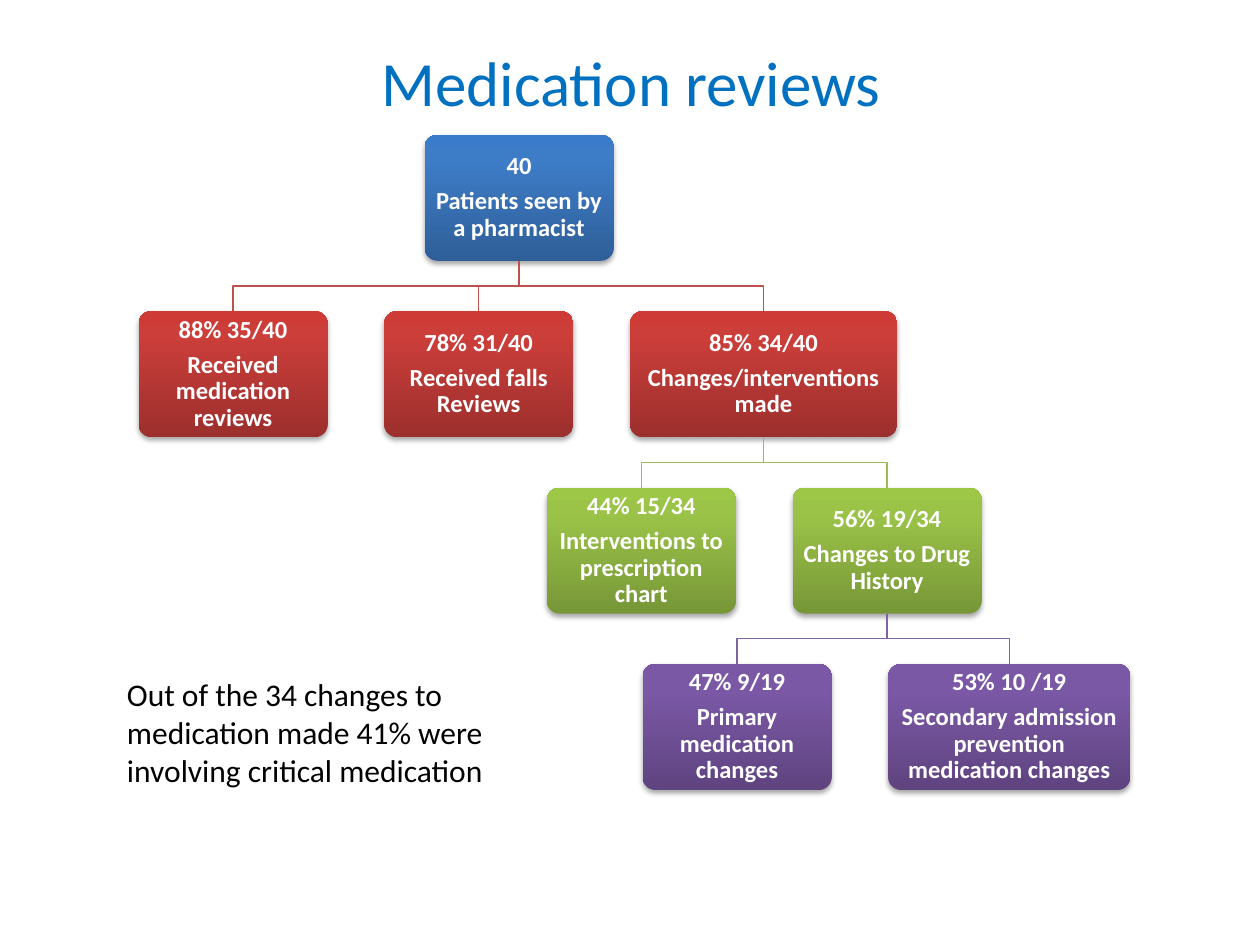
from copy import deepcopy

from lxml.etree import SubElement
from pptx import Presentation
from pptx.dml.color import RGBColor
from pptx.enum.shapes import MSO_SHAPE
from pptx.enum.text import MSO_ANCHOR, PP_ALIGN
from pptx.oxml.ns import qn
from pptx.util import Inches, Pt

COLORS = {
    "title": "0070C0",
    "body": "000000",
    "node_text": "FFFFFF",
    "shadow": "000000",
}
LEVEL_COLORS = {
    "patients": {"stops": ["2F5F99", "3D7CC7", "3A7CCB"]},
    "outcomes": {"stops": ["9C2F2D", "CB3E3A", "CE3B37"], "line": "C0504D"},
    "changes": {"stops": ["779737", "9BC348", "9DC746"], "line": "9BBB59"},
    "medication": {"stops": ["5F4480", "7B58A6", "7C57A8"], "line": "8064A2"},
}
STOP_POSITIONS = [0, 0.8, 1]
NODE_HEIGHT = 1
ROW_PITCH = 1.4
NODE_GAP = 0.45
LEVELS = [
    ("patients", 2.27, [(1.5, "40", "Patients seen by a pharmacist")]),
    ("outcomes", 0, [
        (1.5, "88% 35/40", "Received medication reviews"),
        (1.5, "78% 31/40", "Received falls Reviews"),
        (2.12, "85% 34/40", "Changes/interventions made"),
    ]),
    ("changes", 3.24, [
        (1.5, "44% 15/34", "Interventions to prescription chart"),
        (1.5, "56% 19/34", "Changes to Drug History"),
    ]),
    ("medication", 4, [
        (1.5, "47% 9/19", "Primary medication changes"),
        (1.92, "53% 10 /19", "Secondary admission prevention medication changes"),
    ]),
]


def apply_format(target, values):
    for name, value in values.items():
        setattr(target, name, value)


def write_text(shape, lines, size, color, frame_format, paragraph_format, bold=False):
    frame = shape.text_frame
    apply_format(frame, {"word_wrap": True, **frame_format})
    frame.text = "\n".join(lines)
    for paragraph in frame.paragraphs:
        apply_format(paragraph, paragraph_format)
        font = paragraph.runs[0].font
        apply_format(font, {"name": "Calibri", "size": Pt(size), "bold": bold})
        font.color.rgb = RGBColor.from_string(COLORS[color])


def add_text_box(slide, box, lines, size, color, frame_format, paragraph_format):
    text_box = slide.shapes.add_textbox(*map(Inches, box))
    write_text(text_box, lines, size, color, frame_format, paragraph_format)


def fill_gradient(shape, stops):
    shape.fill.gradient()
    shape.fill.gradient_angle = 90
    stop_list = shape._element.spPr.find(".//" + qn("a:gsLst"))
    stop_list.append(deepcopy(stop_list[-1]))
    for stop, position, color in zip(shape.fill.gradient_stops, STOP_POSITIONS, stops):
        stop.position = position
        stop.color.rgb = RGBColor.from_string(color)


def add_shadow(shape):
    shape.shadow.inherit = False
    effects = shape._element.spPr.find(qn("a:effectLst"))
    shadow = SubElement(effects, qn("a:outerShdw"), blurRad=str(Pt(3.1)),
                        dist=str(Pt(1.8)), dir="5400000", rotWithShape="0")
    color = SubElement(shadow, qn("a:srgbClr"), val=COLORS["shadow"])
    SubElement(color, qn("a:alpha"), val="35000")


def add_node(slide, box, lines, stops):
    node = slide.shapes.add_shape(MSO_SHAPE.ROUNDED_RECTANGLE, *map(Inches, box))
    node.adjustments[0] = 0.1
    node.line.fill.background()
    fill_gradient(node, stops)
    add_shadow(node)
    margins = {f"margin_{side}": Inches(0.05) for side in ("left", "top", "right", "bottom")}
    write_text(node, lines, 14, "node_text",
               {"vertical_anchor": MSO_ANCHOR.MIDDLE, **margins},
               {"alignment": PP_ALIGN.CENTER, "line_spacing": 0.9, "space_after": Pt(4.9)},
               bold=True)
    return node


def add_branch(slide, parent, child, color):
    start_x = parent.left + parent.width // 2
    start_y = parent.top + parent.height
    end_x = child.left + child.width // 2
    middle_y = (start_y + child.top) // 2
    builder = slide.shapes.build_freeform(start_x, start_y)
    builder.add_line_segments(
        [(start_x, middle_y), (end_x, middle_y), (end_x, child.top)], close=False)
    branch = builder.convert_to_shape()
    branch.shadow.inherit = False
    branch.fill.background()
    branch.line.width = Pt(0.75)
    branch.line.color.rgb = RGBColor.from_string(color)


def add_review_tree(slide, left, top):
    parent = None
    for row, (level, offset, nodes) in enumerate(LEVELS):
        colors = LEVEL_COLORS[level]
        node_left = left + offset
        for width, share, label in nodes:
            box = (node_left, top + row * ROW_PITCH, width, NODE_HEIGHT)
            node = add_node(slide, box, [share, label], colors["stops"])
            if parent is not None:
                add_branch(slide, parent, node, colors["line"])
            node_left += width + NODE_GAP
        parent = node


def main():
    presentation = Presentation()
    presentation.slide_width = Inches(10)
    presentation.slide_height = Inches(7.5)
    slide = presentation.slides.add_slide(presentation.slide_layouts[6])
    add_text_box(slide, (0.51, 0.02, 9, 1.25), ["Medication reviews"], 36, "title",
                 {"vertical_anchor": MSO_ANCHOR.MIDDLE}, {"alignment": PP_ALIGN.CENTER})
    add_review_tree(slide, 1.1, 1.07)
    add_text_box(slide, (0.91, 5.31, 3.86, 1.01),
                 ["Out of the 34 changes to medication made 41% were involving critical medication"],
                 18, "body", {}, {"alignment": PP_ALIGN.LEFT})
    presentation.save("out.pptx")


if __name__ == "__main__":
    main()
